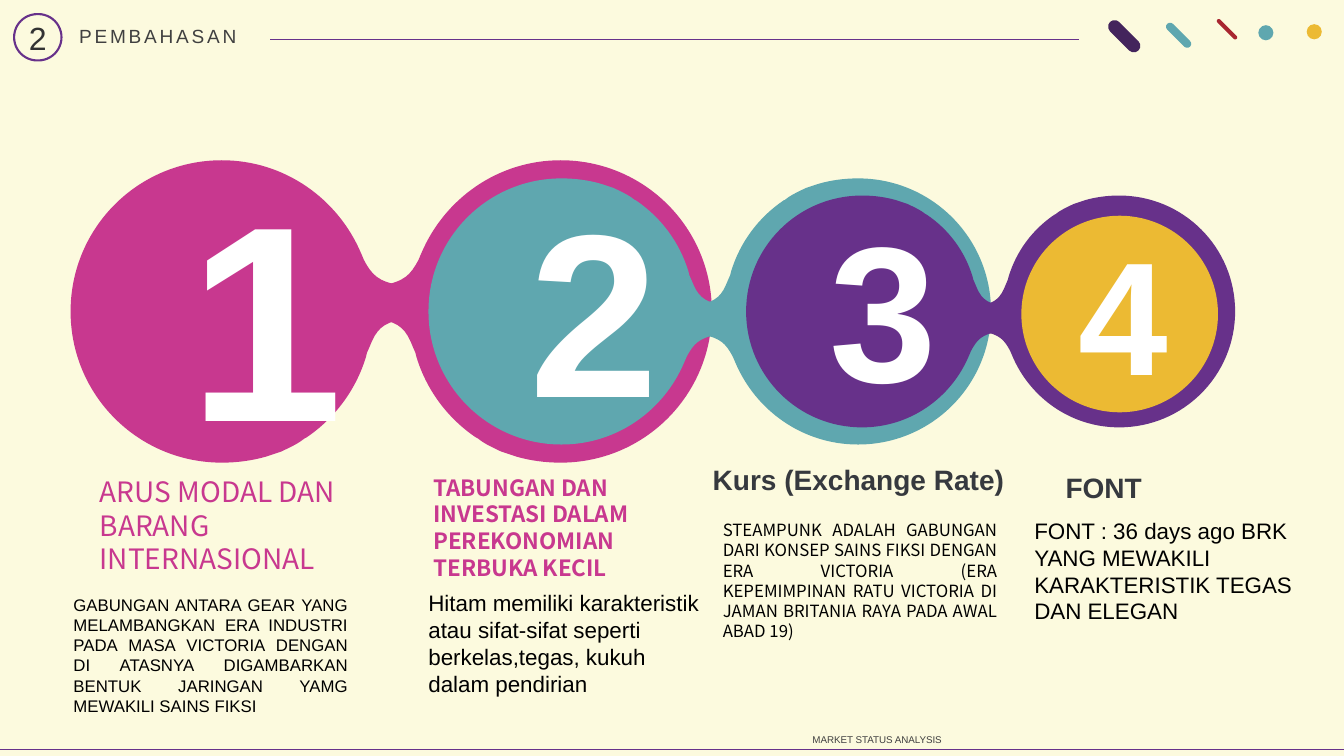
from lxml import etree
from pptx import Presentation
from pptx.dml.color import RGBColor
from pptx.enum.shapes import MSO_CONNECTOR, MSO_SHAPE
from pptx.enum.text import MSO_ANCHOR, MSO_AUTO_SIZE, PP_ALIGN
from pptx.oxml.ns import qn
from pptx.util import Inches, Pt

LEFT, MID, JUST = PP_ALIGN.LEFT, PP_ALIGN.CENTER, PP_ALIGN.JUSTIFY
ROUND, OVAL = MSO_SHAPE.ROUNDED_RECTANGLE, MSO_SHAPE.OVAL
CENTER = MSO_ANCHOR.MIDDLE
GROW = MSO_AUTO_SIZE.SHAPE_TO_FIT_TEXT
ARIAL, NOTO = "Arial", "Noto Sans CJK SC"

HEX = {
    "cream": "FCFADE", "pink": "C8388F", "teal": "5FA7AF",
    "purple": "67318A", "plum": "43245C", "red": "A82630",
    "gold": "ECBA33", "white": "FFFFFF", "black": "000000",
    "gray": "404040", "dark": "333333", "slate": "36393E",
}

# Words, box, size, colour
HEADS = [
    ("PEMBAHASAN", (0.63, 0.09, 1.87, 0.55), 13.6, "gray"),
    ("2", (0.11, 0.12, 0.53, 0.55), 22.9, "dark"),
]
BADGE = (0.14, 0.14, 0.47, 0.46)

# Centre x, centre y, length, thickness, colour
PILLS = [
    (11.15, 0.36, 0.4, 0.13, "plum"),
    (11.69, 0.35, 0.32, 0.08, "teal"),
    (12.17, 0.29, 0.27, 0.04, "red"),
]

# Left, top, width, height, colour
DISCS = [
    (12.48, 0.25, 0.15, 0.15, "teal"),
    (12.96, 0.24, 0.15, 0.15, "gold"),
    (10.13, 2.14, 1.95, 1.95, "gold"),
]

# Start and end of each rule
RULES = [((0, 7.43), (13.33, 7.43)), ((2.68, 0.39), (10.7, 0.39))]

# Circle with a neck on its right, around (0, 0).
# One point is a straight step, three points are a Bezier step.
BASE = 1.5
START = (0, -1.5)
DROP = [
    [(0.62, -1.5), (1.15, -1.12), (1.38, -0.58)],
    [(1.41, -0.51)],
    [(1.49, -0.36), (1.55, -0.3), (1.76, -0.26)],
    [(1.79, 0.08)],
    [(1.59, 0.11), (1.53, 0.19), (1.47, 0.34)],
    [(1.44, 0.41)],
    [(1.43, 0.45)],
    [(1.33, 0.78), (1.12, 1.06), (0.84, 1.25)],
    [(0.82, 1.26)],
    [(0.78, 1.29)],
    [(0.72, 1.33), (0.65, 1.36), (0.59, 1.39)],
    [(0.5, 1.42)],
    [(0.44, 1.44)],
    [(0.3, 1.48), (0.15, 1.5), (0, 1.5)],
    [(-0.83, 1.5), (-1.5, 0.83), (-1.5, 0)],
    [(-1.5, -0.83), (-0.83, -1.5), (0, -1.5)],
]

# Centre x, radius, neck side (1 right, -1 left), upright (1) or flipped (-1), colour
AXIS = 3.09
DROPS = [
    (2.2, 1.5, 1, 1, "pink"),
    (5.56, 1.5, -1, 1, "pink"),
    (5.57, 1.32, 1, -1, "teal"),
    (8.51, 1.32, -1, -1, "teal"),
    (11.1, 1.15, -1, -1, "purple"),
    (8.55, 1.15, 1, -1, "purple"),
]

# Digit, left, top, height, size
DIGITS = [
    ("1", 1.77, 1.37, 3.36, 199), ("2", 5.15, 1.59, 2.82, 166),
    ("3", 8.13, 1.83, 2.36, 138), ("4", 10.6, 2.08, 1.99, 115),
]

# Words, box, size, font, colour, bold, alignment, wrap
TEXTS = [
    ("MARKET STATUS ANALYSIS", (7.96, 7.23, 5.38, 0.22), 7, ARIAL, "gray", False, JUST, True),
    ("GABUNGAN ANTARA GEAR YANG MELAMBANGKAN ERA INDUSTRI PADA MASA VICTORIA "
     "DENGAN DI ATASNYA DIGAMBARKAN BENTUK JARINGAN YAMG MEWAKILI SAINS FIKSI",
     (0.63, 5.85, 2.92, 1.31), 12, ARIAL, "black", False, JUST, True),
    ("ARUS MODAL DAN BARANG INTERNASIONAL",
     (0.89, 4.66, 3.35, 1.11), 20, NOTO, "pink", False, LEFT, True),
    ("TABUNGAN DAN INVESTASI DALAM PEREKONOMIAN TERBUKA KECIL",
     (4.2, 4.65, 2.91, 1.51), 16, NOTO, "pink", True, LEFT, True),
    ("Kurs (Exchange Rate)", (6.97, 4.54, 3.19, 0.44), 20, ARIAL, "slate", True, LEFT, False),
    ("FONT", (10.47, 4.62, 0.97, 0.44), 20, ARIAL, "slate", True, LEFT, False),
    ("Hitam memiliki karakteristik atau sifat-sifat seperti berkelas,tegas, "
     "kukuh dalam pendirian",
     (4.15, 5.8, 2.92, 1.45), 16, ARIAL, "black", False, LEFT, True),
    ("STEAMPUNK ADALAH GABUNGAN DARI KONSEP SAINS FIKSI DENGAN ERA VICTORIA "
     "(ERA KEPEMIMPINAN RATU VICTORIA DI JAMAN BRITANIA RAYA PADA AWAL ABAD 19)",
     (7.07, 5.11, 2.92, 1.31), 12, NOTO, "black", False, JUST, True),
    ("FONT : 36 days ago BRK YANG MEWAKILI KARAKTERISTIK TEGAS DAN ELEGAN",
     (10.16, 5.08, 2.92, 1.18), 16, ARIAL, "black", False, LEFT, True),
]

deck = Presentation()
deck.slide_width, deck.slide_height = Inches(13.33), Inches(7.5)
slide = deck.slides.add_slide(deck.slide_layouts[6])
shapes = slide.shapes


def rgb(name):
    return RGBColor.from_string(HEX[name])


def paint(shape, color):
    shape.shadow.inherit = False
    shape.fill.solid()
    shape.fill.fore_color.rgb = rgb(color)
    shape.line.fill.background()


def write(shape, words, size, font, color, bold=False, align=MID):
    para = shape.text_frame.paragraphs[0]
    para.text = words
    para.alignment = align
    para.font.size, para.font.name = Pt(size), font
    para.font.bold = bold
    para.font.color.rgb = rgb(color)
    return para


def add_text(words, box, size, font, color, bold, align, wrap):
    shape = shapes.add_textbox(*map(Inches, box))
    shape.text_frame.word_wrap = wrap
    shape.text_frame.auto_size = GROW
    write(shape, words, size, font, color, bold, align)


def add_head(words, box, size, color):
    """Add letter-spaced header text, centred in its box."""
    shape = shapes.add_textbox(*map(Inches, box))
    shape.text_frame.word_wrap = True
    shape.text_frame.vertical_anchor = CENTER
    para = write(shape, words, size, ARIAL, color)
    para.line_spacing = 0.9
    para.runs[0]._r.get_or_add_rPr().set("spc", "200")


def add_drop(x, radius, side, up, color):
    """Draw the drop through its end points, then bend the Bezier steps."""
    scale = radius / BASE

    def place(point):
        return Inches(x + side * scale * point[0]), Inches(AXIS + up * scale * point[1])

    form = shapes.build_freeform(*place(START))
    form.add_line_segments([place(step[-1]) for step in DROP], close=True)
    shape = form.convert_to_shape()
    paint(shape, color)
    lines = list(shape._element.iter(qn("a:lnTo")))
    for line, step in zip(lines, DROP):
        if len(step) == 1:
            continue
        curve = etree.Element(qn("a:cubicBezTo"))
        for point in step:
            a, b = place(point)
            etree.SubElement(curve, qn("a:pt"), x=str(a - shape.left), y=str(b - shape.top))
        line.getparent().replace(line, curve)


slide.background.fill.solid()
slide.background.fill.fore_color.rgb = rgb("cream")

badge = shapes.add_shape(ROUND, *map(Inches, BADGE))
badge.adjustments[0] = 0.5
badge.shadow.inherit = False
badge.fill.background()
badge.line.color.rgb = rgb("purple")
badge.line.width = Pt(1.5)
for head in HEADS:
    add_head(*head)

for start, end in RULES:
    rule = shapes.add_connector(MSO_CONNECTOR.STRAIGHT, *map(Inches, start + end))
    rule.line.color.rgb = rgb("purple")
    rule.line.width = Pt(0.5)
    etree.SubElement(rule._element.spPr, qn("a:effectLst"))

for x, y, long, thick, color in PILLS:
    pill = shapes.add_shape(ROUND, *map(Inches, (x - long / 2, y - thick / 2, long, thick)))
    pill.adjustments[0] = 0.5
    pill.rotation = 45
    paint(pill, color)

for drop in DROPS:
    add_drop(*drop)
for *box, color in DISCS:
    paint(shapes.add_shape(OVAL, *map(Inches, box)), color)

for digit, left, top, high, size in DIGITS:
    add_text(digit, (left, top, 0.88, high), size, ARIAL, "white", True, MID, True)
for text in TEXTS:
    add_text(*text)

deck.save("out.pptx")
